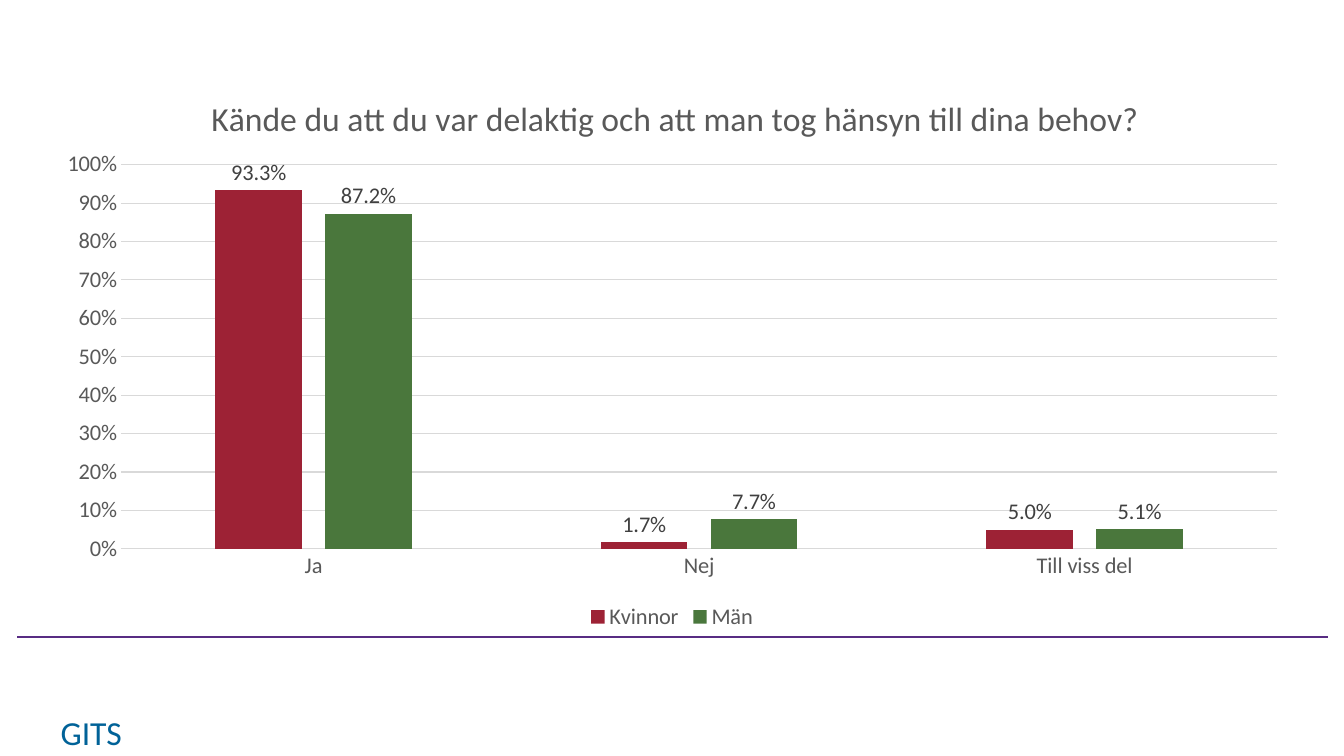
from dataclasses import dataclass

from lxml import etree
from pptx import Presentation
from pptx.chart.data import CategoryChartData
from pptx.dml.color import RGBColor
from pptx.enum.chart import XL_CHART_TYPE as ChartType
from pptx.enum.chart import XL_LABEL_POSITION as LabelPosition
from pptx.enum.chart import XL_LEGEND_POSITION as LegendPosition
from pptx.enum.chart import XL_TICK_MARK as TickMark
from pptx.enum.shapes import MSO_CONNECTOR as Connector
from pptx.enum.text import PP_ALIGN as Align
from pptx.oxml import parse_xml
from pptx.oxml.ns import nsdecls, qn
from pptx.util import Inches, Pt


@dataclass(frozen=True)
class Theme:
    font: str = "Calibri"
    title_size: int = 24
    body_size: int = 16
    grey: str = "595959"
    label: str = "404040"
    grid: str = "D9D9D9"
    footer: str = "006298"
    rule: str = "582C83"
    women: str = "9D2235"
    men: str = "4A773C"


THEME = Theme()
QUESTION = "Kände du att du var delaktig och att man tog hänsyn till dina behov?"
ANSWERS = ["Ja", "Nej", "Till viss del"]
GROUPS = [
    ("Kvinnor", [0.933, 0.017, 0.05], THEME.women),
    ("Män", [0.872, 0.077, 0.051], THEME.men),
]


def style_font(font, size, color):
    font.name = THEME.font
    font.size = Pt(size)
    font.bold = False
    font.color.rgb = RGBColor.from_string(color)


def style_line(line, color, width):
    line.color.rgb = RGBColor.from_string(color)
    line.width = Pt(width)


def add_footer(slide, text):
    box = slide.shapes.add_textbox(Inches(0.47), Inches(7.01), Inches(0.87), Inches(0.5))
    box.text_frame.word_wrap = True
    paragraph = box.text_frame.paragraphs[0]
    paragraph.alignment = Align.CENTER
    run = paragraph.add_run()
    run.text = text
    style_font(run.font, THEME.title_size, THEME.footer)


def add_rule(slide):
    rule = slide.shapes.add_connector(
        Connector.STRAIGHT, Inches(0.17), Inches(6.32), Inches(13.17), Inches(6.32)
    )
    style_line(rule.line, THEME.rule, 1)
    etree.SubElement(rule._element.spPr, qn("a:effectLst"))


def manual_layout(target, **fractions):
    modes = "".join(f'<c:{axis}Mode val="edge"/>' for axis in "xy")
    sizes = "".join(f'<c:{key} val="{value}"/>' for key, value in fractions.items())
    return parse_xml(
        f'<c:layout {nsdecls("c")}><c:manualLayout>{target}{modes}{sizes}'
        "</c:manualLayout></c:layout>"
    )


def add_title(chart, text):
    chart.has_title = True
    title = chart.chart_title
    run = title.text_frame.paragraphs[0].add_run()
    run.text = text
    style_font(run.font, THEME.title_size, THEME.grey)
    title.include_in_layout = False
    element = title._element
    for layout in element.findall(qn("c:layout")):
        element.remove(layout)
    element.find(qn("c:tx")).addnext(manual_layout("", x=0.13, y=0.05))


def place_plot(chart):
    plot_area = chart._chartSpace.chart.plotArea
    for layout in plot_area.findall(qn("c:layout")):
        plot_area.remove(layout)
    inner = '<c:layoutTarget val="inner"/>'
    plot_area.insert(0, manual_layout(inner, x=0.063, y=0.18, w=0.917, h=0.67))


def style_axes(chart):
    for axis in (chart.category_axis, chart.value_axis):
        axis.major_tick_mark = TickMark.NONE
        axis.minor_tick_mark = TickMark.NONE
        style_font(axis.tick_labels.font, THEME.body_size, THEME.grey)
    style_line(chart.category_axis.format.line, THEME.grid, 0.75)
    value_axis = chart.value_axis
    value_axis.minimum_scale = 0
    value_axis.maximum_scale = 1
    value_axis.major_unit = 0.1
    value_axis.tick_labels.number_format = "0%"
    value_axis.tick_labels.number_format_is_linked = False
    value_axis.format.line.fill.background()
    style_line(value_axis.major_gridlines.format.line, THEME.grid, 0.75)


def style_series(series, color):
    series.format.fill.solid()
    series.format.fill.fore_color.rgb = RGBColor.from_string(color)
    labels = series.data_labels
    labels.show_value = True
    labels.position = LabelPosition.OUTSIDE_END
    labels.number_format = "0.0%"
    labels.number_format_is_linked = False
    style_font(labels.font, THEME.body_size, THEME.label)


def add_answer_chart(slide):
    data = CategoryChartData(number_format="0.0%")
    data.categories = ANSWERS
    for name, values, _ in GROUPS:
        data.add_series(name, values)
    chart = slide.shapes.add_chart(
        ChartType.COLUMN_CLUSTERED,
        Inches(0.41), Inches(0.61), Inches(12.51), Inches(5.69), data,
    ).chart
    style_font(chart.font, THEME.body_size, THEME.grey)
    add_title(chart, QUESTION)
    place_plot(chart)
    style_axes(chart)
    plot = chart.plots[0]
    plot.gap_width = 219
    plot.overlap = -27
    plot.vary_by_categories = False
    for series, (_, _, color) in zip(plot.series, GROUPS):
        style_series(series, color)
    chart.has_legend = True
    chart.legend.position = LegendPosition.BOTTOM
    chart.legend.include_in_layout = False
    style_font(chart.legend.font, THEME.body_size, THEME.grey)


def main():
    presentation = Presentation()
    presentation.slide_width = Inches(13.33)
    presentation.slide_height = Inches(7.5)
    slide = presentation.slides.add_slide(presentation.slide_layouts[6])
    add_footer(slide, "GITS")
    add_rule(slide)
    add_answer_chart(slide)
    presentation.save("out.pptx")


if __name__ == "__main__":
    main()
